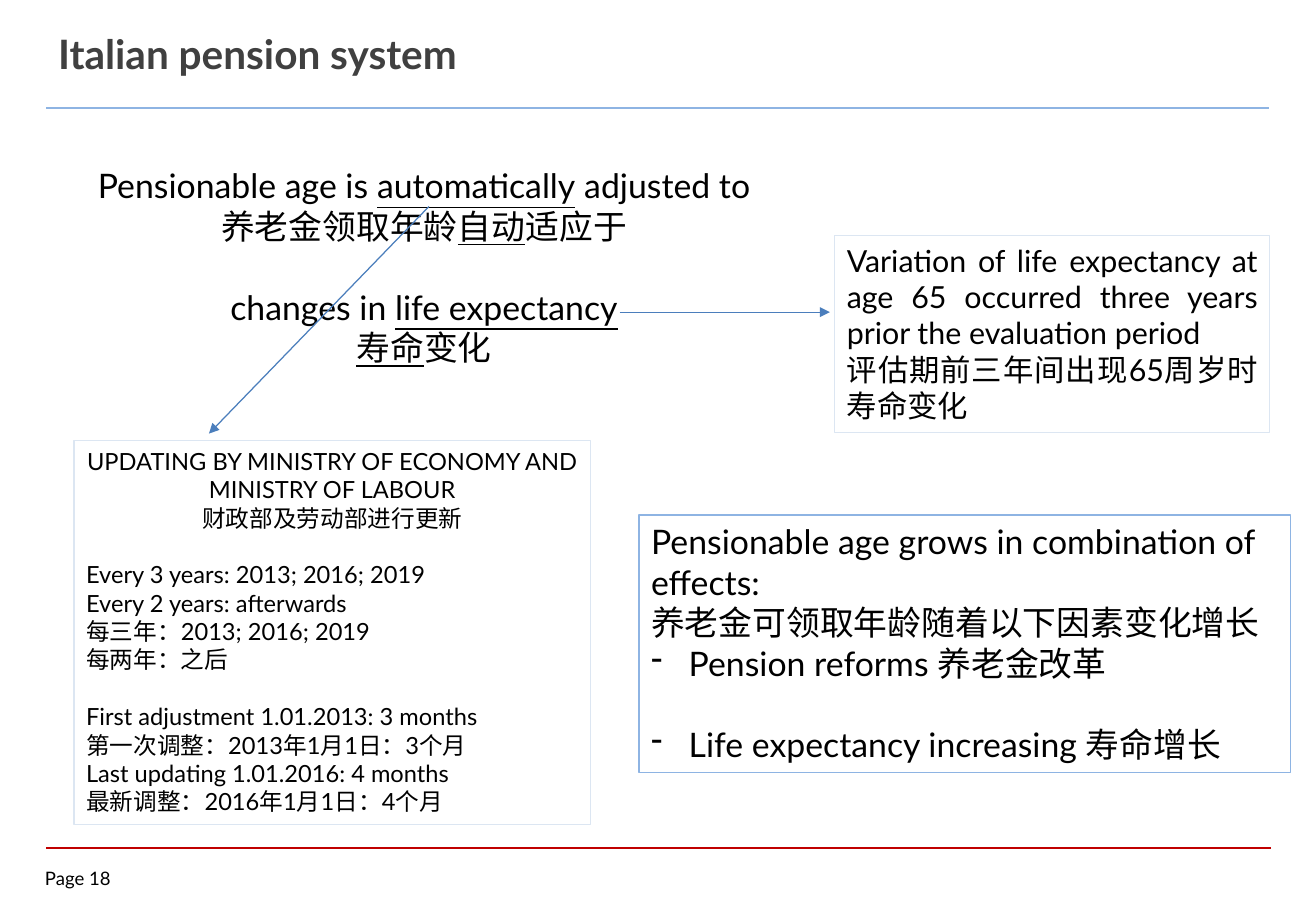
from lxml.etree import SubElement
from pptx import Presentation
from pptx.dml.color import RGBColor as RGB
from pptx.enum.shapes import MSO_CONNECTOR as Link
from pptx.enum.text import PP_ALIGN as Align, MSO_AUTO_SIZE as Fit
from pptx.oxml.ns import qn
from pptx.util import Pt

PX = 9144
THEME = {
    "font": "Lato", "ink": "000000", "title": "404040", "red": "C00000",
    "blue": "8EB4E3", "pale": "DCE6F2", "arrow": "4B7EBC",
    "head": 24, "big": 20, "mid": 18, "small": 14, "foot": 11,
}
LEFT, MID, JUST = Align.LEFT, Align.CENTER, Align.JUSTIFY

deck = Presentation()
deck.slide_width, deck.slide_height = 1083 * PX, 750 * PX
slide = deck.slides.add_slide(deck.slide_layouts[6])
shapes = slide.shapes


def add_text(area, size, paras, edge=None, ink="ink", bold=False):
    box = shapes.add_textbox(*[v * PX for v in area])
    if edge:
        box.line.color.rgb = RGB.from_string(THEME[edge])
        box.line.width = Pt(0.75)
    frame = box.text_frame
    frame.word_wrap = True
    frame.auto_size = Fit.NONE
    for i, (align, gap, dash, runs) in enumerate(paras):
        para = frame.paragraphs[0] if i == 0 else frame.add_paragraph()
        para.alignment = align
        if gap:
            para.space_before = Pt(THEME[size] * 1.2)
        if dash:
            props = para._p.get_or_add_pPr()
            props.set("marL", str(31 * PX))
            props.set("indent", str(-31 * PX))
            SubElement(props, qn("a:buFontTx"))
            SubElement(props, qn("a:buChar"), char="-")
        for words, under in runs:
            if words == "\n":
                para.add_line_break()
                SubElement(para._p[-1], qn("a:rPr"), sz=str(THEME[size] * 100))
                continue
            run = para.add_run()
            run.text = words
            font = run.font
            font.name, font.size = THEME["font"], Pt(THEME[size])
            font.color.rgb = RGB.from_string(THEME[ink])
            font.bold, font.underline = bold, under
    return frame


def add_line(ends, tone, width, tip=False):
    line = shapes.add_connector(Link.STRAIGHT, *[v * PX for v in ends])
    line.line.color.rgb = RGB.from_string(THEME[tone])
    line.line.width = Pt(width)
    props = line._element.spPr
    if tip:
        SubElement(props.find(qn("a:ln")), qn("a:tailEnd"), type="triangle")
    SubElement(props, qn("a:effectLst"))


add_line((38, 698, 1046, 698), "red", 1)
add_line((38, 89, 1044, 89), "blue", 1.5)

page = add_text((37, 714, 73, 22), "foot", [(LEFT, 0, 0, [("Page 18", False)])])
page.margin_left = page.margin_top = page.margin_right = page.margin_bottom = 0

add_text((38, 19, 756, 71), "head",
         [(LEFT, 0, 0, [("Italian pension system", False)])],
         ink="title", bold=True)

add_text((38, 131, 622, 178), "big", [
    (MID, 0, 0, [("Pensionable age is ", False), ("automatically", True),
                 (" adjusted to", False), ("\n", False),
                 ("养老金领取年龄", False), ("自动", True), ("适应于", False)]),
    (MID, 1, 0, [("changes in ", False), ("life expectancy", True)]),
    (MID, 0, 0, [("寿命", True), ("变化", False)]),
])

add_text((61, 363, 425, 316), "small", [
    (MID, 0, 0, [("UPDATING BY MINISTRY OF ECONOMY AND MINISTRY OF LABOUR", False),
                 ("\n", False), ("财政部及劳动部进行更新", False)]),
    (LEFT, 1, 0, [("Every 3 years: 2013; 2016; 2019", False)]),
    (LEFT, 0, 0, [("Every 2 years: afterwards", False)]),
    (LEFT, 0, 0, [("每三年：2013; 2016; 2019", False)]),
    (LEFT, 0, 0, [("每两年：之后", False)]),
    (LEFT, 1, 0, [("First adjustment 1.01.2013: 3 months", False),
                  ("\n", False), ("第一次调整：2013年1月1日：3个月", False)]),
    (LEFT, 0, 0, [("Last updating 1.01.2016: 4 months", False),
                  ("\n", False), ("最新调整：2016年1月1日：4个月", False)]),
], edge="pale")

add_line((510, 257, 683, 257), "arrow", 0.75, tip=True)
add_line((353, 170, 172, 357), "arrow", 0.75, tip=True)

add_text((687, 194, 358, 162), "mid", [
    (JUST, 0, 0, [("Variation of life expectancy at age 65 occurred three years "
                   "prior the evaluation period", False)]),
    (JUST, 0, 0, [("评估期前三年间出现65周岁时寿命变化", False)]),
], edge="pale")

add_text((526, 424, 536, 212), "big", [
    (LEFT, 0, 0, [("Pensionable age grows in combination of effects:", False),
                  ("\n", False), ("养老金可领取年龄随着以下因素变化增长", False)]),
    (LEFT, 0, 1, [("Pension reforms 养老金改革", False)]),
    (LEFT, 1, 1, [("Life expectancy increasing 寿命增长", False)]),
], edge="blue")

deck.save("out.pptx")
